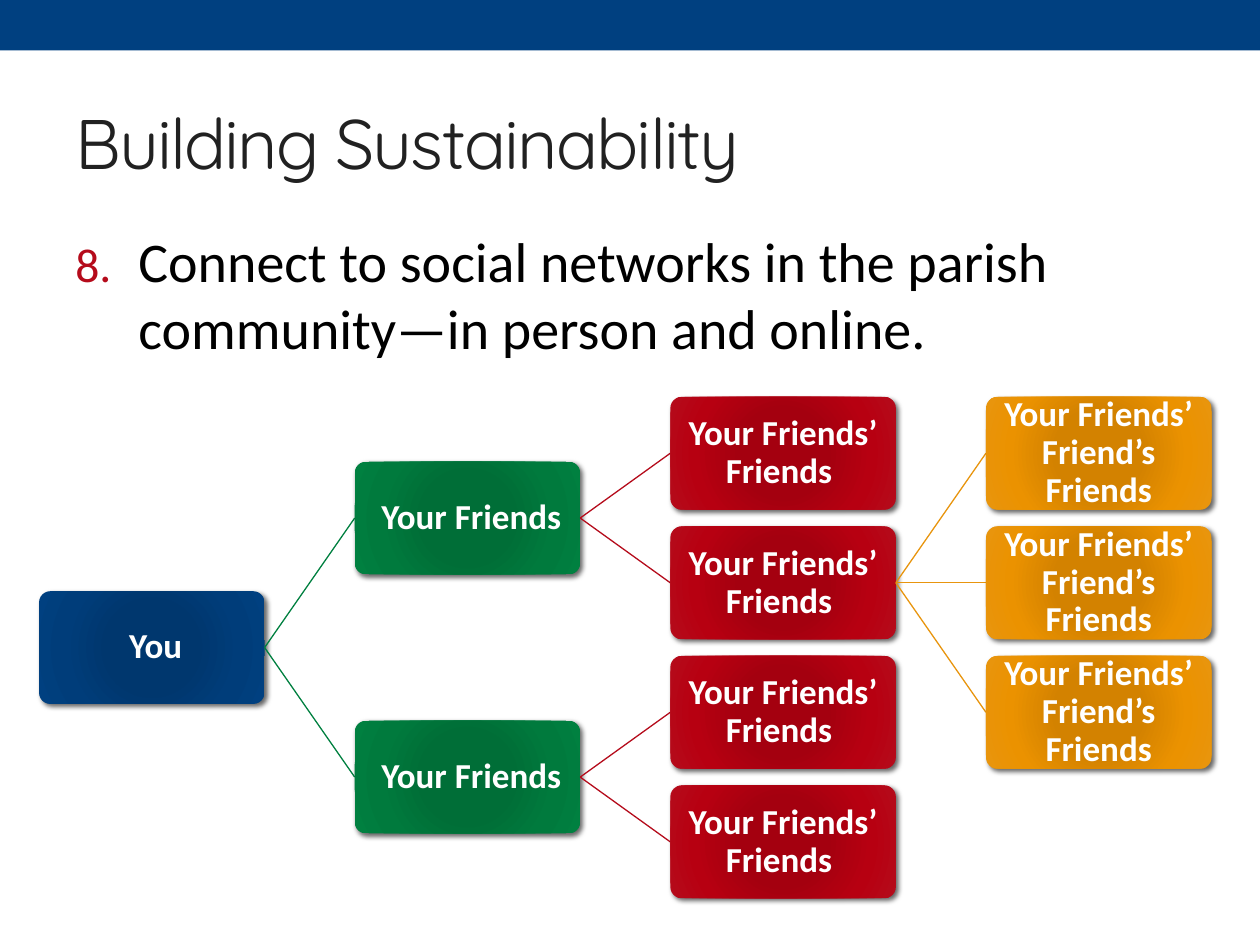
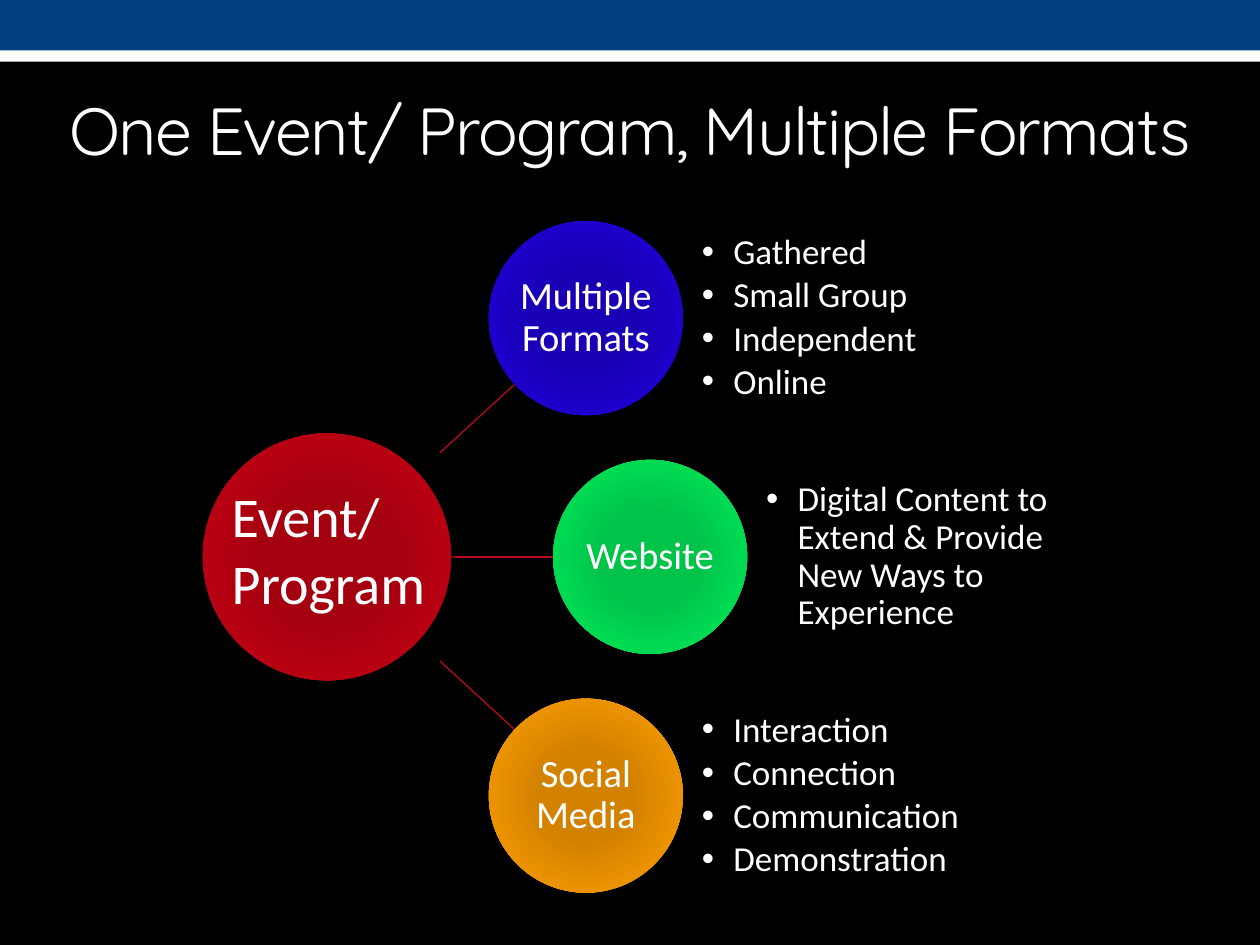
from pptx import Presentation
from pptx.dml.color import RGBColor
from pptx.enum.shapes import MSO_CONNECTOR, MSO_SHAPE
from pptx.enum.text import MSO_ANCHOR, PP_ALIGN
from pptx.oxml import parse_xml
from pptx.oxml.ns import nsdecls, qn
from pptx.util import Inches, Pt

COLUMNS, ROWS = 100, 75
WHITE, BLACK, INK, BLUE = "FFFFFF", "000000", "212121", "004080"
GRADIENTS = {
    "blue": ("00376E", "003D7A", "004080"),
    "green": ("006E37", "007A3D", "008040"),
    "red": ("A4000F", "B70011", "B50B1B"),
    "orange": ("D38200", "EB9200", "E8950E"),
    "violet": ("1A00B4", "1D00C9", "270CC6"),
    "lime": ("00C34A", "00DA53", "0DD75A"),
}
DOT = '<a:buFont {ns} typeface="Arial"/>', '<a:buChar {ns} char="•"/>'
RED_NUMBER = (
    '<a:buClr {ns}><a:srgbClr val="B50B1B"/></a:buClr>',
    '<a:buSzPct {ns} val="85000"/>',
    '<a:buFont {ns} typeface="+mj-lt"/>',
    '<a:buAutoNum {ns} type="arabicPeriod" startAt="8"/>',
)

LEVELS = [
    (" You", "blue"),
    (" Your Friends", "green"),
    ("Your Friends’ Friends ", "red"),
    ("Your Friends’ Friend’s Friends", "orange"),
]
FRIENDS = [
    (0, 1.5, None),
    (1, 0.5, 1.5), (1, 2.5, 1.5),
    (2, 0, 0.5), (2, 1, 0.5), (2, 2, 2.5), (2, 3, 2.5),
    (3, 0, 1), (3, 1, 1), (3, 2, 1),
]
FORMATS = [
    ("Multiple Formats ", "violet", 38.8,
     ["Gathered", "Small Group", "Independent", "Online"]),
    ("Website", "lime", 43.9,
     ["Digital Content to Extend & Provide New Ways to Experience"]),
    ("Social Media", "orange", 38.8,
     ["Interaction", "Connection", "Communication", "Demonstration"]),
]


def rgb(value):
    return RGBColor.from_string(value)


def xml(template):
    return parse_xml(template.replace("{ns}", nsdecls("a")))


def write(tf, text, size=20, color=WHITE, font="Calibri", bold=False, align=PP_ALIGN.LEFT,
          anchor=MSO_ANCHOR.MIDDLE, inset=(0, 0), line=None, after=0, tracking=0,
          bullet=(), indent=0):
    tf.word_wrap = True
    tf.vertical_anchor = anchor
    tf.margin_left = tf.margin_right = Inches(inset[0])
    tf.margin_top = tf.margin_bottom = Inches(inset[1])
    for i, item in enumerate([text] if isinstance(text, str) else text):
        p = tf.add_paragraph() if i else tf.paragraphs[0]
        p.alignment, p.line_spacing, p.space_after = align, line, Pt(after)
        pPr = p._p.get_or_add_pPr()
        for mark in bullet:
            pPr.append(xml(mark))
        if bullet:
            pPr.set("marL", str(Inches(indent)))
            pPr.set("indent", str(-Inches(indent)))
        r = p.add_run()
        r.text = item
        r.font.size, r.font.name, r.font.bold = Pt(size), font, bold
        r.font.color.rgb = rgb(color)
        if tracking:
            r.font._element.set("spc", str(tracking * 100))


class Deck:
    def __init__(self):
        self.prs = Presentation()
        self.prs.slide_width, self.prs.slide_height = Inches(10), Inches(7.5)
        self.slide = None

    def x(self, columns):
        return round(self.prs.slide_width * columns / COLUMNS)

    def y(self, rows):
        return round(self.prs.slide_height * rows / ROWS)

    def place(self, left, top, width, height):
        return self.x(left), self.y(top), self.x(width), self.y(height)

    def add_slide(self, background):
        self.slide = self.prs.slides.add_slide(self.prs.slide_layouts[6])
        fill = self.slide.background.fill
        fill.solid()
        fill.fore_color.rgb = rgb(background)
        if background != WHITE:
            self.band(2.4, 2.5, WHITE)
        self.band(0, 4, BLUE)

    def shape(self, kind, at):
        sp = self.slide.shapes.add_shape(kind, *self.place(*at))
        sp.shadow.inherit = False
        sp.line.fill.background()
        return sp

    def band(self, top, height, color):
        sp = self.shape(MSO_SHAPE.RECTANGLE, (0, top, COLUMNS, height))
        sp.fill.solid()
        sp.fill.fore_color.rgb = rgb(color)

    def glossy(self, kind, at, hue, text="", **style):
        sp = self.shape(kind, at)
        dark, middle, edge = GRADIENTS[hue]
        stops = "".join(
            f'<a:gs pos="{pos}000"><a:srgbClr val="{color}"/></a:gs>'
            for pos, color in ((0, dark), (34, dark), (70, middle), (100, edge)))
        sp.fill.background()
        spPr = sp.element.spPr
        spPr.replace(spPr.find(qn("a:noFill")), xml(
            f'<a:gradFill {{ns}} rotWithShape="1"><a:gsLst>{stops}</a:gsLst><a:path path="circle">'
            '<a:fillToRect l="50000" t="50000" r="50000" b="50000"/></a:path></a:gradFill>'))
        spPr.find(qn("a:effectLst")).append(xml(
            f'<a:outerShdw {{ns}} blurRad="{Pt(3)}" dist="{Pt(2)}" dir="2700000" rotWithShape="0">'
            '<a:srgbClr val="000000"><a:alpha val="60000"/></a:srgbClr></a:outerShdw>'))
        if text:
            write(sp.text_frame, text, align=PP_ALIGN.CENTER, line=0.9, **style)
        return sp

    def line(self, x1, y1, x2, y2, hue):
        cn = self.slide.shapes.add_connector(
            MSO_CONNECTOR.STRAIGHT, self.x(x1), self.y(y1), self.x(x2), self.y(y2))
        cn.line.width = Pt(0.75)
        cn.line.color.rgb = rgb(GRADIENTS[hue][2])
        cn.element.spPr.append(xml("<a:effectLst {ns}/>"))

    def text(self, at, text, **style):
        tb = self.slide.shapes.add_textbox(*self.place(*at))
        write(tb.text_frame, text, **style)

    def title(self, at, text, **style):
        self.text(at, text, font="Quicksand", tracking=-1, inset=(0.1, 0.05), **style)


def sustainability(deck):
    deck.add_slide(WHITE)
    deck.title((5, 5.8, 90, 10.8), "Building Sustainability", size=40, color=INK)
    deck.text((5, 17.5, 90, 53.3),
              "Connect to social networks in the parish community—in person and online.",
              size=32, color=BLACK, anchor=MSO_ANCHOR.TOP, inset=(0.1, 0.05),
              bullet=RED_NUMBER, indent=0.5)
    left, top, width, height = 3.1, 31.5, 17.9, 8.95
    column_step, row_step = 25.05, 10.28
    for level, row, parent in FRIENDS:
        label, hue = LEVELS[level]
        x, y = left + level * column_step, top + row * row_step
        if parent is not None:
            deck.line(x - column_step + width, top + parent * row_step + height / 2,
                      x, y + height / 2, hue)
        sp = deck.glossy(MSO_SHAPE.ROUNDED_RECTANGLE, (x, y, width, height), hue, label,
                         bold=True, inset=(0.01, 0.01))
        sp.adjustments[0] = 0.1


def formats(deck):
    deck.add_slide(BLACK)
    deck.title((0, 4.3, 100, 11.8), "One Event/ Program, Multiple Formats",
               size=38, color=WHITE, align=PP_ALIGN.CENTER)
    middle, step, size = 44.2, 18.95, 15.4
    for side in (-1, 0, 1):
        deck.line(34.9, middle + side * 8.25, 40.9 if side else 43.9,
                  middle + side * 13.75, "red")
    deck.glossy(MSO_SHAPE.OVAL, (16.1, 34.4, 19.7, 19.6), "red")
    for i, (label, hue, left, points) in enumerate(FORMATS):
        top = middle + (i - 1) * step - size / 2
        deck.glossy(MSO_SHAPE.OVAL, (left, top, size, size), hue, label,
                    size=22, inset=(0.02, 0.02))
        deck.text((left + 16.9, top, 23.1, size), points, line=0.9, after=3,
                  bullet=DOT, indent=0.25)
    deck.text((17.4, 37.7, 18.4, 11.8), "Event/Program", size=32,
              anchor=MSO_ANCHOR.TOP, inset=(0.1, 0.05))


def main():
    deck = Deck()
    sustainability(deck)
    formats(deck)
    deck.prs.save("out.pptx")


if __name__ == "__main__":
    main()
